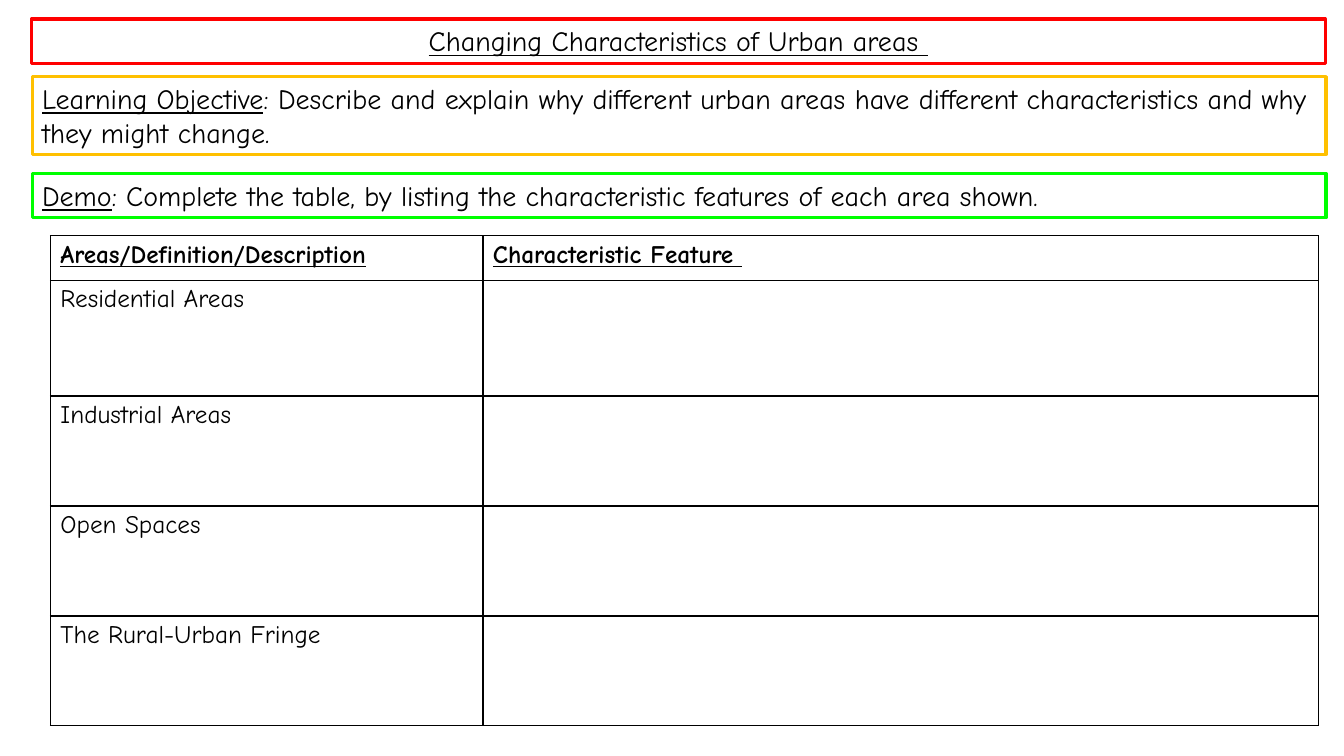
from lxml import etree
from pptx import Presentation
from pptx.dml.color import RGBColor
from pptx.enum import shapes, text
from pptx.oxml.ns import qn
from pptx.util import Cm, Pt

BLACK = RGBColor(0, 0, 0)
RED = RGBColor(0xFF, 0, 0)
AMBER = RGBColor(0xFF, 0xC0, 0)
GREEN = RGBColor(0, 0xFF, 0)
FONT = "Comic Neue"


def add_run(p, content, **formats):
    r = p.add_run()
    r.text = content
    r.font.color.rgb = BLACK
    for name, value in {"name": FONT, **formats}.items():
        setattr(r.font, name, value)


def add_borders(cell):
    """Draw a thin black line on all four sides of a table cell."""
    tcPr = cell._tc.get_or_add_tcPr()
    for i, side in enumerate(("lnL", "lnR", "lnT", "lnB")):
        ln = etree.Element(qn(f"a:{side}"), w=str(Pt(1)))
        fill = etree.SubElement(ln, qn("a:solidFill"))
        etree.SubElement(fill, qn("a:srgbClr"), val=str(BLACK))
        tcPr.insert(i, ln)


prs = Presentation()
prs.slide_width, prs.slide_height = Cm(33.87), Cm(19.05)
slide = prs.slides.add_slide(prs.slide_layouts[6])

# Framed boxes: left, top, height, colour, alignment, underlined text, plain text
LEFT, CENTER = text.PP_ALIGN.LEFT, text.PP_ALIGN.CENTER
boxes = [
    (0.79, 0.48, 1.12, RED, CENTER, "Changing Characteristics of Urban areas ", ""),
    (0.81, 1.93, 1.96, AMBER, LEFT, "Learning Objective",
     ": Describe and explain why different urban areas have different "
     "characteristics and why they might change."),
    (0.81, 4.37, 1.12, GREEN, LEFT, "Demo",
     ": Complete the table, by listing the characteristic features of each area shown."),
]
for left, top, height, color, align, heading, body in boxes:
    sp = slide.shapes.add_shape(shapes.MSO_SHAPE.RECTANGLE,
                                Cm(left), Cm(top), Cm(32.61), Cm(height))
    sp.shadow.inherit = False
    sp.fill.background()
    sp.line.color.rgb = color
    sp.line.width = Pt(2.25)
    tf = sp.text_frame
    tf.word_wrap = True
    tf.vertical_anchor = text.MSO_ANCHOR.TOP
    p = tf.paragraphs[0]
    p.alignment = align
    add_run(p, heading, size=Pt(20), underline=True)
    if body:
        add_run(p, body, size=Pt(20))

# Table of urban areas
rows = [
    ("Areas/Definition/Description", "Characteristic Feature "),
    ("Residential Areas", ""),
    ("Industrial Areas", ""),
    ("Open Spaces", ""),
    ("The Rural-Urban Fringe", ""),
]
col_widths = (10.9, 21.06)
row_heights = (1.12, 2.92, 2.77, 2.77, 2.77)
table = slide.shapes.add_table(len(rows), len(col_widths), Cm(1.27), Cm(5.94),
                               Cm(sum(col_widths)), Cm(sum(row_heights))).table
table.first_row = table.horz_banding = False
for column, width in zip(table.columns, col_widths):
    column.width = Cm(width)
for i, (row, height, labels) in enumerate(zip(table.rows, row_heights, rows)):
    row.height = Cm(height)
    for cell, label in zip(row.cells, labels):
        cell.fill.background()
        add_borders(cell)
        if label:
            add_run(cell.text_frame.paragraphs[0], label,
                    size=Pt(18), bold=i == 0, underline=i == 0)

prs.save("out.pptx")
